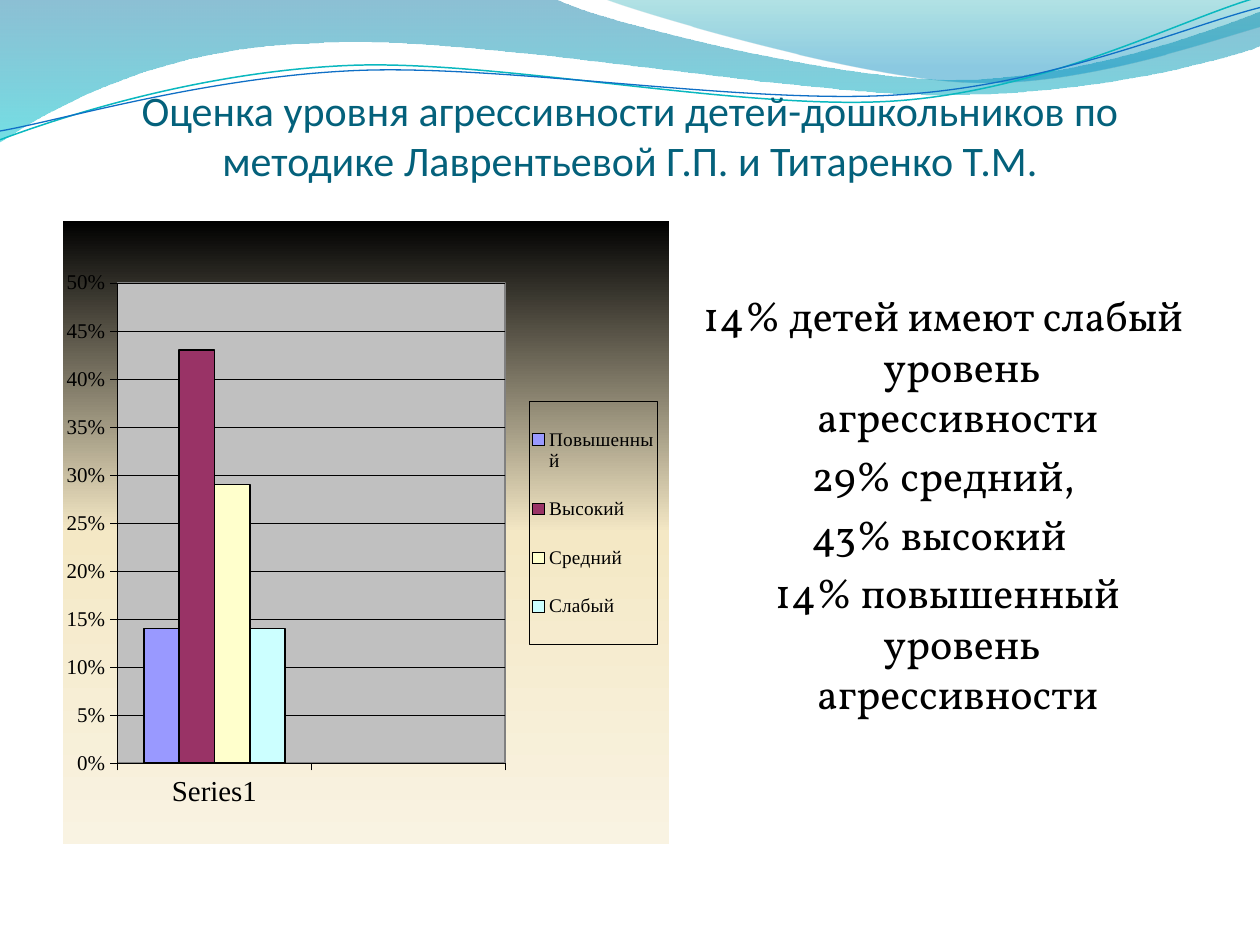
from lxml import etree
from pptx import Presentation
from pptx.chart.data import CategoryChartData
from pptx.dml.color import RGBColor
from pptx.enum.chart import XL_CHART_TYPE, XL_LEGEND_POSITION, XL_TICK_MARK
from pptx.enum.text import MSO_ANCHOR, MSO_AUTO_SIZE, PP_ALIGN
from pptx.oxml import parse_xml
from pptx.oxml.ns import nsdecls, qn
from pptx.util import Inches, Pt

BLACK = RGBColor(0x00, 0x00, 0x00)
TITLE_TEAL = RGBColor(0x04, 0x61, 0x7B)
LINE_TEAL = RGBColor(0x0A, 0xB8, 0xBF)
LINE_BLUE = RGBColor(0x0F, 0x6F, 0xC6)
PLOT_GREY = RGBColor(0xC0, 0xC0, 0xC0)
BORDER_GREY = RGBColor(0x80, 0x80, 0x80)
LILAC = RGBColor(0x99, 0x99, 0xFF)
PLUM = RGBColor(0x99, 0x33, 0x66)
CREAM = RGBColor(0xFF, 0xFF, 0xCC)
ICE = RGBColor(0xCC, 0xFF, 0xFF)


def vertical_gradient(stops):
    """Top-to-bottom gradient from (position %, colour, opacity %) stops."""
    stop_xml = "".join(
        f'<a:gs pos="{pos * 1000}"><a:srgbClr val="{color}">'
        f'<a:alpha val="{opacity * 1000}"/></a:srgbClr></a:gs>'
        for pos, color, opacity in stops)
    return parse_xml(f'<a:gradFill {nsdecls("a")} rotWithShape="1"><a:gsLst>{stop_xml}'
                     '</a:gsLst><a:lin ang="5400000" scaled="0"/></a:gradFill>')


def add_wave(slide, segments, closed):
    """Outline from (x, y) line points and six-number Bezier segments, in inches."""
    anchors = [(Inches(segment[-2]), Inches(segment[-1])) for segment in segments]
    builder = slide.shapes.build_freeform(*anchors[0], scale=1.0)
    builder.add_line_segments(anchors[1:], close=closed)
    wave = builder.convert_to_shape()
    wave.shadow.inherit = False
    straight_parts = list(wave.element.spPr.iter(qn("a:lnTo")))
    for segment, straight in zip(segments[1:], straight_parts):
        if len(segment) == 6:
            curve = etree.Element(qn("a:cubicBezTo"))
            for x, y in zip(segment[::2], segment[1::2]):
                etree.SubElement(curve, qn("a:pt"), x=str(Inches(x) - wave.left),
                                 y=str(Inches(y) - wave.top))
            straight.getparent().replace(straight, curve)
    return wave


prs = Presentation()
prs.slide_width, prs.slide_height = Inches(10), Inches(7.5)
slide = prs.slides.add_slide(prs.slide_layouts[5])

# Translucent header waves
header_waves = [
    ([(0, 0), (4.4, -0.01), (4.76, 0.17, 6.64, 0.63, 7.58, 0.63),
      (8.53, 0.63, 9.58, 0.26, 10, 0.09), (10.01, 0.36),
      (9.83, 0.44, 8.7, 0.76, 7.46, 0.75), (6.22, 0.75, 3.82, 0.28, 2.57, 0.34),
      (1.29, 0.36, 0.46, 0.83, -0.01, 1.13)],
     [(0, "0074A1", 45), (100, "00C6CF", 55)]),
    ([(4.79, -0.01), (5.09, 0.11, 6.82, 0.62, 7.69, 0.65),
      (8.56, 0.69, 9.61, 0.32, 10, 0.21), (10, 0)],
     [(0, "00A1A9", 30), (80, "008BBF", 45)]),
]
for segments, stops in header_waves:
    wave = add_wave(slide, segments, True)
    wave.line.fill.background()
    wave.fill.solid()
    solid_fill = wave.element.spPr.find(qn("a:solidFill"))
    solid_fill.getparent().replace(solid_fill, vertical_gradient(stops))

# Thin wave lines
wave_lines = [
    ([(0, 1.11), (0.48, 0.93, 1.58, 0.57, 2.77, 0.52), (3.95, 0.47, 5.93, 0.89, 7.13, 0.8),
      (8.33, 0.71, 9.38, 0.15, 9.98, -0.02)], LINE_TEAL, 0.85),
    ([(0, 1.04), (0.47, 0.96, 1.64, 0.61, 2.83, 0.56), (4.03, 0.51, 5.97, 0.84, 7.17, 0.75),
      (8.36, 0.67, 9.41, 0.21, 10, 0.06)], LINE_BLUE, 0.75),
]
for segments, color, width in wave_lines:
    wave = add_wave(slide, segments, False)
    wave.fill.background()
    wave.line.color.rgb = color
    wave.line.width = Pt(width)

# Title, kept in front of the waves
title = slide.shapes.title
slide.shapes._spTree.append(title.element)
title.left, title.top, title.width, title.height = map(Inches, (0.5, 0.21, 9, 1.26))
heading = title.text_frame
heading.text = "Оценка уровня агрессивности детей-дошкольников по методике Лаврентьевой Г.П. и Титаренко Т.М."
heading.word_wrap = True
heading.auto_size = MSO_AUTO_SIZE.NONE
heading.vertical_anchor = MSO_ANCHOR.BOTTOM
heading.margin_left = heading.margin_right = heading.margin_bottom = 0
heading.margin_top = Inches(0.05)
heading.paragraphs[0].alignment = PP_ALIGN.CENTER
heading_font = heading.paragraphs[0].runs[0].font
heading_font.name, heading_font.size = "Calibri", Pt(24)
heading_font.color.rgb = TITLE_TEAL

# Aggression level chart
levels = [("Повышенный", 0.14, LILAC), ("Высокий", 0.43, PLUM),
          ("Средний", 0.29, CREAM), ("Слабый", 0.14, ICE)]
level_data = CategoryChartData(number_format="0%")
level_data.categories = ["Series1", ""]
for name, share, _ in levels:
    level_data.add_series(name, [share, None])
chart = slide.shapes.add_chart(XL_CHART_TYPE.COLUMN_CLUSTERED, Inches(0.5), Inches(1.75),
                               Inches(4.81), Inches(4.95), level_data).chart
chart.has_title = False
plot = chart.plots[0]
plot.vary_by_categories = False
plot.gap_width, plot.overlap = 150, 0
for series, (_, _, color) in zip(plot.series, levels):
    series.format.fill.solid()
    series.format.fill.fore_color.rgb = color
    series.format.line.color.rgb = BLACK
    series.format.line.width = Pt(1)

share_axis, level_axis = chart.value_axis, chart.category_axis
share_axis.minimum_scale, share_axis.maximum_scale = 0, 0.5
share_axis.major_unit = 0.05
share_axis.tick_labels.number_format = "0%"
share_axis.tick_labels.number_format_is_linked = False
share_axis.has_major_gridlines = True
for axis in (share_axis, level_axis):
    axis.major_tick_mark = XL_TICK_MARK.OUTSIDE
for ruled in (share_axis, level_axis, share_axis.major_gridlines):
    ruled.format.line.color.rgb = BLACK
    ruled.format.line.width = Pt(0.25)

chart.has_legend = True
legend = chart.legend
legend.position = XL_LEGEND_POSITION.RIGHT
legend.include_in_layout = False
for font, size in ((chart.font, 16.5), (level_axis.tick_labels.font, 16.5),
                   (share_axis.tick_labels.font, 12), (legend.font, 11)):
    font.name, font.size = "Times New Roman", Pt(size)
    font.color.rgb = BLACK

# Chart layout, frames and background
chart_element = chart._chartSpace.find(qn("c:chart"))
plot_area = chart_element.find(qn("c:plotArea"))
legend_element = chart_element.find(qn("c:legend"))
for part, before, target, box in (
        (plot_area, None, '<c:layoutTarget val="inner"/>', (0.09, 0.1, 0.64, 0.77)),
        (legend_element, "c:legendPos", "", (0.77, 0.29, 0.21, 0.39))):
    for old_layout in part.findall(qn("c:layout")):
        part.remove(old_layout)
    x, y, w, h = box
    layout = parse_xml(
        f'<c:layout {nsdecls("c")}><c:manualLayout>{target}<c:xMode val="edge"/>'
        f'<c:yMode val="edge"/><c:x val="{x}"/><c:y val="{y}"/><c:w val="{w}"/>'
        f'<c:h val="{h}"/></c:manualLayout></c:layout>')
    if before:
        part.find(qn(before)).addnext(layout)
    else:
        part.insert(0, layout)

plot_area.append(parse_xml(
    f'<c:spPr {nsdecls("c", "a")}><a:solidFill><a:srgbClr val="{PLOT_GREY}"/></a:solidFill>'
    f'<a:ln w="12700"><a:solidFill><a:srgbClr val="{BORDER_GREY}"/></a:solidFill></a:ln></c:spPr>'))
legend_element.find(qn("c:txPr")).addprevious(parse_xml(
    f'<c:spPr {nsdecls("c", "a")}><a:noFill/><a:ln w="3175"><a:solidFill>'
    f'<a:srgbClr val="{BLACK}"/></a:solidFill></a:ln></c:spPr>'))
background = parse_xml(f'<c:spPr {nsdecls("c", "a")}><a:ln><a:noFill/></a:ln></c:spPr>')
background.insert(0, vertical_gradient([(0, "000000", 100), (50, "F4E8C5", 100),
                                        (100, "F9F3E2", 100)]))
chart_element.addnext(background)

# Findings
findings = ["14% детей имеют слабый уровень агрессивности ", " 29% средний, ", "43% высокий ",
            " 14% повышенный уровень агрессивности "]
summary = slide.shapes.add_textbox(Inches(5.47), Inches(1.75), Inches(4.03),
                                   Inches(4.99)).text_frame
summary.word_wrap = True
summary.margin_top = Inches(0.55)
summary.text = "\n".join(findings)
for index, paragraph in enumerate(summary.paragraphs):
    indents = paragraph._p.get_or_add_pPr()
    indents.set("marL", str(Inches(0.3)))
    indents.set("indent", str(Inches(-0.3)))
    etree.SubElement(indents, qn("a:buNone"))
    paragraph.alignment = PP_ALIGN.CENTER
    if index:
        paragraph.space_before = Pt(4.8)
    font = paragraph.runs[0].font
    font.name, font.size = "Vollkorn", Pt(24)
    font.color.rgb = BLACK

prs.save("out.pptx")
